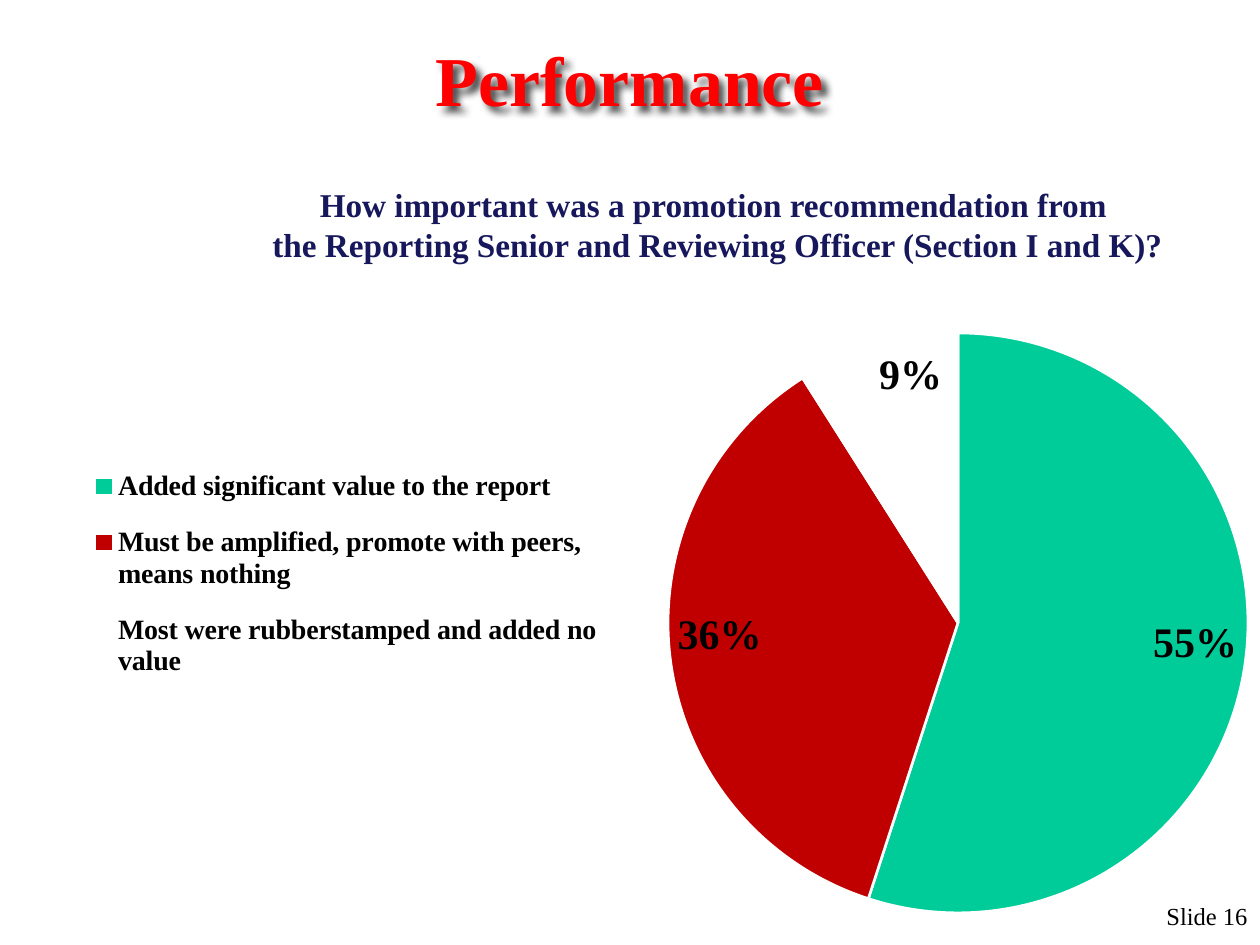
from lxml.etree import SubElement
from pptx import Presentation
from pptx.chart.data import CategoryChartData
from pptx.dml.color import RGBColor
from pptx.enum.chart import XL_CHART_TYPE, XL_LABEL_POSITION, XL_LEGEND_POSITION
from pptx.enum.text import MSO_ANCHOR, PP_ALIGN
from pptx.oxml import parse_xml
from pptx.oxml.ns import nsdecls, qn
from pptx.util import Emu, Pt

PIXEL = 914400 / 126
FONT = "Times New Roman"
RED = RGBColor(0xFF, 0x00, 0x00)
NAVY = RGBColor(0x17, 0x17, 0x5C)
BLACK = RGBColor(0x00, 0x00, 0x00)
GREEN = RGBColor(0x00, 0xCC, 0x99)
DARK_RED = RGBColor(0xC0, 0x00, 0x00)
WHITE = RGBColor(0xFF, 0xFF, 0xFF)

ANSWERS = [
    ("Added significant value to the report", 0.55, GREEN),
    ("Must be amplified, promote with\u00a0peers, means nothing", 0.36, DARK_RED),
    ("Most were rubberstamped and added no value", 0.09, WHITE),
]


def px(length):
    return Emu(round(length * PIXEL))


def set_font(font, size, color, bold=False):
    font.name = FONT
    font.size = Pt(size)
    font.bold = bold
    font.color.rgb = color


def add_text(slide, box, lines, size, color, alignment, bold=False):
    shape = slide.shapes.add_textbox(*map(px, box))
    text_frame = shape.text_frame
    text_frame.word_wrap = True
    text_frame.text = "\n".join(lines)
    for paragraph in text_frame.paragraphs:
        paragraph.alignment = alignment
        for run in paragraph.runs:
            set_font(run.font, size, color, bold)
    return shape


def add_title(slide, box):
    shape = add_text(slide, box, ["Performance"], 40, RED, PP_ALIGN.CENTER, True)
    shape.text_frame.vertical_anchor = MSO_ANCHOR.MIDDLE
    # Soft shadow down and to the right
    shape._element.spPr.append(parse_xml(
        f'<a:effectLst {nsdecls("a")}>'
        '<a:outerShdw blurRad="50800" dist="50800" dir="2700000" algn="tl" rotWithShape="0">'
        '<a:srgbClr val="000000"><a:alpha val="70000"/></a:srgbClr>'
        '</a:outerShdw></a:effectLst>'))


def add_question(slide, box):
    lines = ["How important was a promotion recommendation from ",
             "the Reporting Senior and Reviewing Officer (Section I and K)?"]
    shape = add_text(slide, box, lines, 19, NAVY, PP_ALIGN.CENTER, True)
    shape.text_frame.paragraphs[1].space_before = Pt(0.2)


def set_layout(element, chart_box, part, inner=False):
    """Place a chart part, given in px inside the chart box."""
    for old in element.findall(qn("c:layout")):
        element.remove(old)
    layout = parse_xml(f'<c:layout {nsdecls("c")}><c:manualLayout/></c:layout>')
    manual = layout[0]
    settings = [("layoutTarget", "inner")] if inner else []
    settings += [("xMode", "edge"), ("yMode", "edge")]
    sizes = chart_box[2:] * 2
    settings += [(name, f"{length / size:.4f}")
                 for name, length, size in zip("xywh", part, sizes)]
    for name, value in settings:
        SubElement(manual, qn(f"c:{name}")).set("val", value)
    # The layout follows the legend position, or leads the plot area
    position = element.find(qn("c:legendPos"))
    if position is None:
        element.insert(0, layout)
    else:
        position.addnext(layout)


def add_answer_chart(slide, box):
    data = CategoryChartData(number_format="0%")
    data.categories = [answer for answer, _, _ in ANSWERS]
    data.add_series("Series 1", [share for _, share, _ in ANSWERS])
    chart = slide.shapes.add_chart(XL_CHART_TYPE.PIE, *map(px, box), data).chart
    chart.has_title = False
    set_font(chart.font, 10, BLACK)

    # Slices
    plot = chart.plots[0]
    plot.vary_by_categories = True
    for index, (_, _, color) in enumerate(ANSWERS):
        point_format = plot.series[0].points[index].format
        point_format.fill.solid()
        point_format.fill.fore_color.rgb = color
        point_format.line.color.rgb = WHITE
        point_format.line.width = Pt(1.5)

    # Percentages
    plot.has_data_labels = True
    labels = plot.data_labels
    labels.show_value = True
    labels.number_format = "0%"
    labels.number_format_is_linked = False
    labels.position = XL_LABEL_POSITION.INSIDE_END
    set_font(labels.font, 24, BLACK, True)

    # Legend
    chart.has_legend = True
    legend = chart.legend
    legend.position = XL_LEGEND_POSITION.LEFT
    legend.include_in_layout = False
    set_font(legend.font, 16, BLACK, True)

    plot_area = chart._chartSpace.chart.plotArea
    set_layout(plot_area, box, (605, 67, 580, 580), inner=True)
    set_layout(legend._element, box, (18, 180, 530, 256))


def main():
    presentation = Presentation()
    presentation.slide_width = px(1260)
    presentation.slide_height = px(945)
    slide = presentation.slides.add_slide(presentation.slide_layouts[6])
    add_title(slide, (0, 42, 1260, 73))
    add_question(slide, (203, 178, 1029, 92))
    add_text(slide, (959, 895, 301, 50), ["Slide 16"], 14, BLACK, PP_ALIGN.RIGHT)
    add_answer_chart(slide, (63, 266, 1260, 665))
    presentation.save("out.pptx")


if __name__ == "__main__":
    main()
